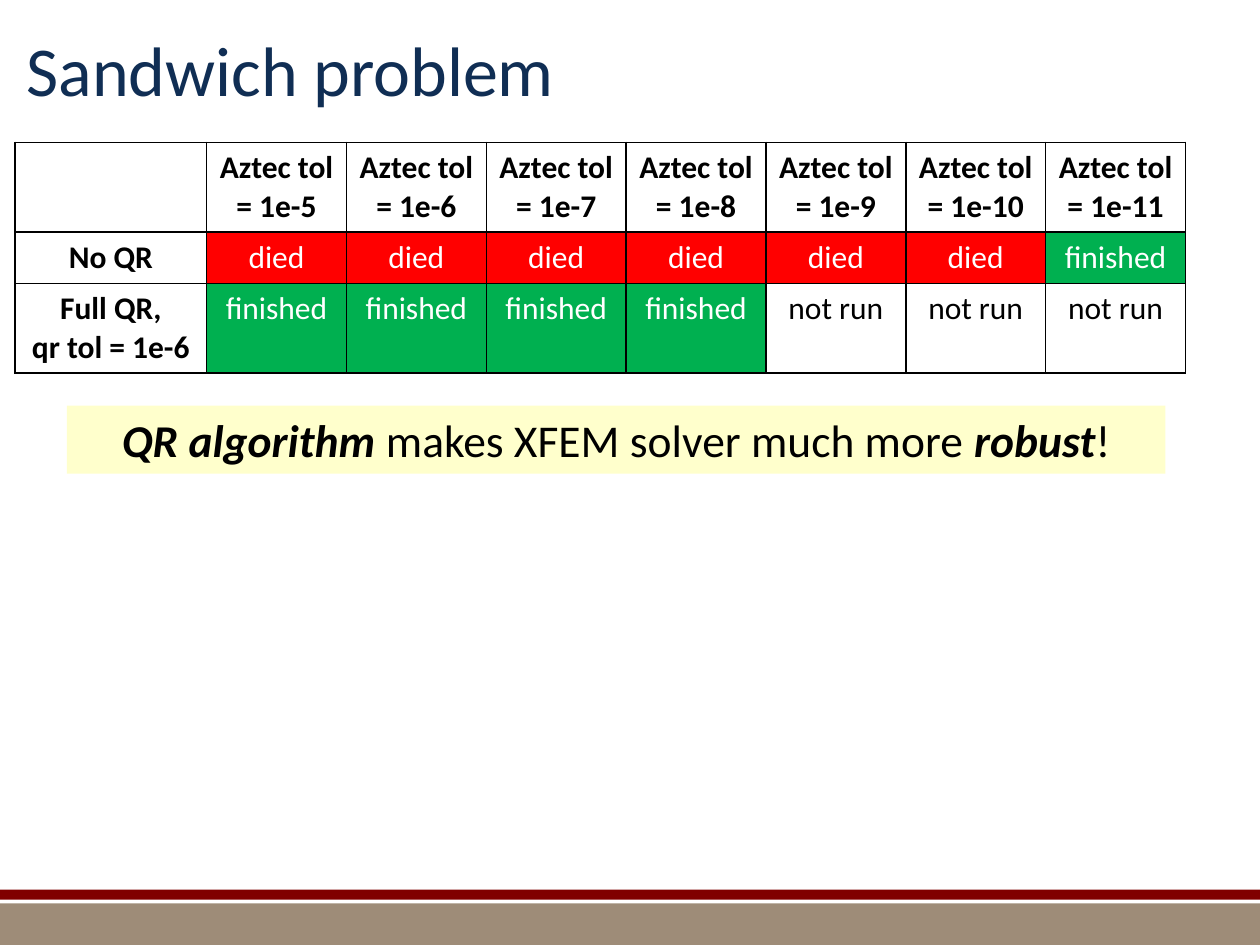
from dataclasses import dataclass

from lxml.etree import SubElement
from pptx import Presentation
from pptx.dml.color import RGBColor
from pptx.enum.shapes import MSO_SHAPE
from pptx.enum.text import MSO_ANCHOR, PP_ALIGN
from pptx.oxml.ns import qn
from pptx.shapes.autoshape import Shape
from pptx.slide import Slide
from pptx.table import _Cell as Cell
from pptx.text.text import Font
from pptx.util import Inches, Pt


@dataclass(frozen=True)
class Theme:
    """Colours, font and type sizes of the slide."""
    face: str = "Calibri"
    navy: str = "102E54"
    black: str = "000000"
    white: str = "FFFFFF"
    red: str = "FF0000"
    green: str = "00B050"
    cream: str = "FFFFCC"
    tan: str = "9E8C78"
    maroon: str = "800000"
    head: int = 40
    note: int = 26
    cell: int = 18


@dataclass(frozen=True)
class Bar:
    """A plain filled rectangle, in inches."""
    left: float
    top: float
    width: float
    height: float
    fill: str


@dataclass(frozen=True)
class Look:
    """Fill, text colour and weight of a table cell."""
    fill: str
    ink: str
    bold: bool = False


THEME = Theme()
LABEL = Look(THEME.white, THEME.black, True)
LOOKS = {
    "died": Look(THEME.red, THEME.white),
    "finished": Look(THEME.green, THEME.white),
    "not run": Look(THEME.white, THEME.black),
}
BANDS = [Bar(0, 7.17, 10, 0.33, THEME.tan), Bar(0, 7.06, 10, 0.08, THEME.maroon)]
NOTE = Bar(0.53, 3.22, 8.72, 0.54, THEME.cream)
ROWS = [
    ["", *(f"Aztec tol = 1e-{n}" for n in range(5, 12))],
    ["No QR", *["died"] * 6, "finished"],
    ["Full QR,\vqr tol = 1e-6", *["finished"] * 4, *["not run"] * 3],
]
WIDTHS = [1.52] + [1.11] * 7
HEIGHTS = [0.71, 0.41, 0.71]


def style(font: Font, size: int, ink: str) -> None:
    """Set face, size and colour."""
    font.name = THEME.face
    font.size = Pt(size)
    font.color.rgb = RGBColor.from_string(ink)


def draw_bar(slide: Slide, bar: Bar) -> Shape:
    """Draw one filled rectangle."""
    box = (Inches(v) for v in (bar.left, bar.top, bar.width, bar.height))
    shape = slide.shapes.add_shape(MSO_SHAPE.RECTANGLE, *box)
    shape.shadow.inherit = False
    shape.fill.solid()
    shape.fill.fore_color.rgb = RGBColor.from_string(bar.fill)
    shape.line.fill.background()
    return shape


def draw_title(slide: Slide, text: str) -> None:
    """Place and fill the title."""
    title = slide.shapes.title
    title.left, title.top = Inches(0.11), Inches(-0.04)
    title.width, title.height = Inches(8.36), Inches(1.17)
    frame = title.text_frame
    frame.text = text
    frame.vertical_anchor = MSO_ANCHOR.MIDDLE
    para = frame.paragraphs[0]
    para.alignment = PP_ALIGN.LEFT
    style(para.font, THEME.head, THEME.navy)


def add_edges(cell: Cell) -> None:
    """Give a cell thin black edges."""
    props = cell._tc.get_or_add_tcPr()
    for side in ("lnL", "lnR", "lnT", "lnB"):
        line = SubElement(props, qn(f"a:{side}"), w=str(Pt(1)))
        fill = SubElement(line, qn("a:solidFill"))
        SubElement(fill, qn("a:srgbClr"), val=THEME.black)


def fill_cell(cell: Cell, text: str) -> None:
    """Write and format one cell."""
    look = LOOKS.get(text, LABEL)
    add_edges(cell)
    cell.fill.solid()
    cell.fill.fore_color.rgb = RGBColor.from_string(look.fill)
    cell.text = text
    para = cell.text_frame.paragraphs[0]
    para.alignment = PP_ALIGN.CENTER
    style(para.font, THEME.cell, look.ink)
    para.font.bold = look.bold


def draw_table(slide: Slide) -> None:
    """Draw the table of solver results."""
    frame = slide.shapes.add_table(
        len(ROWS), len(WIDTHS), Inches(0.12), Inches(1.13),
        Inches(sum(WIDTHS)), Inches(sum(HEIGHTS)))
    table = frame.table
    table.first_row = table.horz_banding = False
    for col, width in zip(table.columns, WIDTHS):
        col.width = Inches(width)
    for row, height, texts in zip(table.rows, HEIGHTS, ROWS):
        row.height = Inches(height)
        for cell, text in zip(row.cells, texts):
            fill_cell(cell, text)


def draw_note(slide: Slide) -> None:
    """Draw the closing remark."""
    frame = draw_bar(slide, NOTE).text_frame
    frame.word_wrap = True
    para = frame.paragraphs[0]
    para.alignment = PP_ALIGN.CENTER
    style(para.font, THEME.note, THEME.black)
    parts = [("QR algorithm ", True), ("makes XFEM solver much more", False),
             (" robust", True), ("!", False)]
    for text, strong in parts:
        run = para.add_run()
        run.text = text
        run.font.bold = run.font.italic = strong


def main() -> None:
    """Build and save the slide."""
    deck = Presentation()
    deck.slide_width, deck.slide_height = Inches(10), Inches(7.5)
    slide = deck.slides.add_slide(deck.slide_layouts[5])
    for bar in BANDS:
        draw_bar(slide, bar)
    draw_table(slide)
    draw_title(slide, "Sandwich problem")
    draw_note(slide)
    deck.save("out.pptx")


if __name__ == "__main__":
    main()
